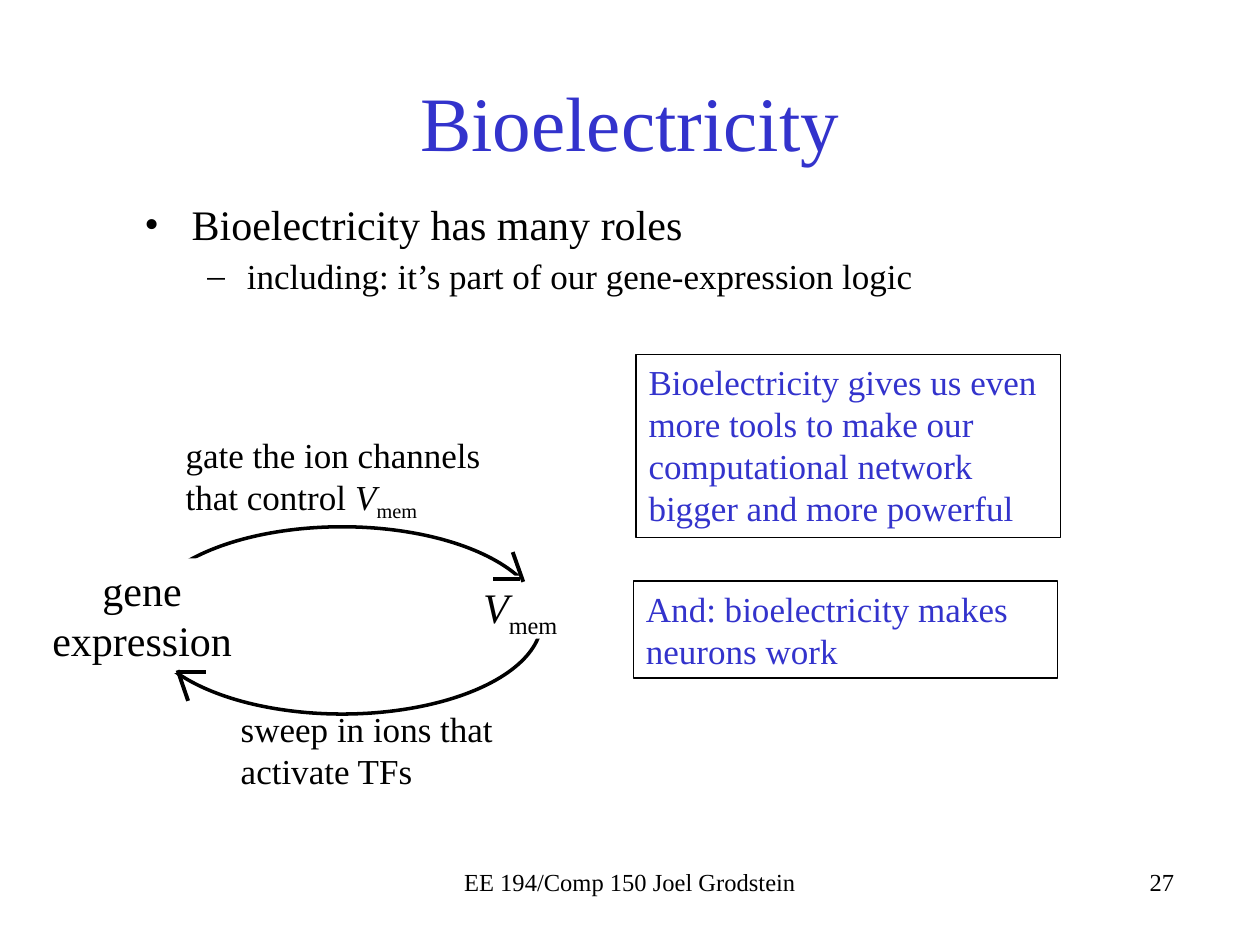
from pptx import Presentation
from pptx.dml.color import RGBColor
from pptx.enum.shapes import MSO_CONNECTOR, MSO_SHAPE
from pptx.enum.text import MSO_ANCHOR, PP_ALIGN
from pptx.oxml.ns import qn
from pptx.util import Pt
from lxml.etree import SubElement

COLORS = {"ink": "000000", "accent": "3333CC", "paper": "FFFFFF"}
FONT = "Times New Roman"
VMEM = [("V", "italic"), ("mem", "subscript")]


def color(name):
    return RGBColor.from_string(COLORS[name])


def add_spans(para, spans, size, ink="ink"):
    for text, style in spans:
        span = para.add_run()
        span.text = text
        span.font.name = FONT
        span.font.size = Pt(size)
        span.font.color.rgb = color(ink)
        span.font.italic = style == "italic"
        if style == "subscript":
            span._r.get_or_add_rPr().set("baseline", "-25000")


def add_text(page, box, spans, size, ink="ink", align=PP_ALIGN.LEFT, fill=None, border=False):
    label = page.shapes.add_textbox(*map(Pt, box))
    label.text_frame.word_wrap = True
    if fill:
        label.fill.solid()
        label.fill.fore_color.rgb = color(fill)
    if border:
        label.line.color.rgb = color("ink")
        label.line.width = Pt(0.75)
    para = label.text_frame.paragraphs[0]
    para.alignment = align
    add_spans(para, spans, size, ink)
    return label


def add_title(page, box, text):
    title = page.shapes.title
    title.left, title.top, title.width, title.height = map(Pt, box)
    title.text_frame.vertical_anchor = MSO_ANCHOR.MIDDLE
    para = title.text_frame.paragraphs[0]
    para.alignment = PP_ALIGN.CENTER
    add_spans(para, [(text, "plain")], 44, "accent")


def add_bullets(page, box, items):
    frame = page.shapes.add_textbox(*map(Pt, box)).text_frame
    frame.word_wrap = True
    for index, (text, level, mark, size, margin, hang) in enumerate(items):
        para = frame.add_paragraph() if index else frame.paragraphs[0]
        para.level = level
        para.space_before = Pt(3)
        add_spans(para, [(text, "plain")], size)
        props = para._p.get_or_add_pPr()
        props.set("marL", str(Pt(margin)))
        props.set("indent", str(-Pt(hang)))
        SubElement(props, qn("a:buFont")).set("typeface", FONT)
        SubElement(props, qn("a:buChar")).set("char", mark)


def add_stroke(page, start, end):
    stroke = page.shapes.add_connector(MSO_CONNECTOR.STRAIGHT, *map(Pt, start + end))
    stroke.line.color.rgb = color("ink")
    stroke.line.width = Pt(2.25)
    SubElement(stroke._element.spPr, qn("a:effectLst"))


def add_cycle(page, box):
    left, top, width, height = box
    loop = page.shapes.add_shape(MSO_SHAPE.OVAL, *map(Pt, box))
    loop.shadow.inherit = False
    loop.fill.background()
    loop.line.color.rgb = color("ink")
    loop.line.width = Pt(2)

    add_text(page, (left - 65.5, top + 18, 130.5, 65.5), [("gene expression", "plain")], 24,
             align=PP_ALIGN.CENTER, fill="paper")
    add_text(page, (left + 187.5, top + 28, 64, 36), VMEM, 24, fill="paper")

    right_tip = (left + 217.5, top + 31.5)
    left_tip = (left + 20, top + 83)
    x, y = right_tip
    add_stroke(page, (x - 6, y - 17), (x, y))
    add_stroke(page, (x - 17, y - 1.5), (x - 2, y - 1.5))
    x, y = left_tip
    add_stroke(page, (x, y - 1), (x + 6, y + 16.5))
    add_stroke(page, (x + 1, y), (x + 16, y))

    add_text(page, (left + 17.5, top - 57, 191, 55.5),
             [("gate the ion channels that control ", "plain")] + VMEM, 20)
    add_text(page, (left + 49, top + 99.5, 186, 55.5),
             [("sweep in ions that activate TFs", "plain")], 20)


def add_callout(page, box, text):
    add_text(page, box, [(text, "plain")], 20, "accent", border=True)


def add_footer(page, box, credit, number):
    left, top, width, height = box
    add_text(page, (left, top, width, height), [(credit, "plain")], 14, align=PP_ALIGN.CENTER)
    add_text(page, (left + 204, top, width, height), [(number, "plain")], 14, align=PP_ALIGN.RIGHT)


def main():
    deck = Presentation()
    deck.slide_width, deck.slide_height = Pt(720), Pt(540)
    page = deck.slides.add_slide(deck.slide_layouts[5])
    add_title(page, (54, 24, 612, 90), "Bioelectricity")
    add_bullets(page, (75.5, 110, 612, 87), [
        ("Bioelectricity has many roles", 0, "•", 24, 27, 27),
        ("including: it’s part of our gene-expression logic", 1, "–", 20, 58.5, 22.5),
    ])
    add_cycle(page, (81.5, 301, 228, 107))
    add_callout(page, (363.5, 202.5, 242.5, 104.5),
                "Bioelectricity gives us even more tools to make our "
                "computational network bigger and more powerful")
    add_callout(page, (362, 332, 242.5, 55.5), "And: bioelectricity makes neurons work")
    add_footer(page, (246, 492, 228, 36), "EE 194/Comp 150 Joel Grodstein", "27")
    deck.save("out.pptx")


if __name__ == "__main__":
    main()
